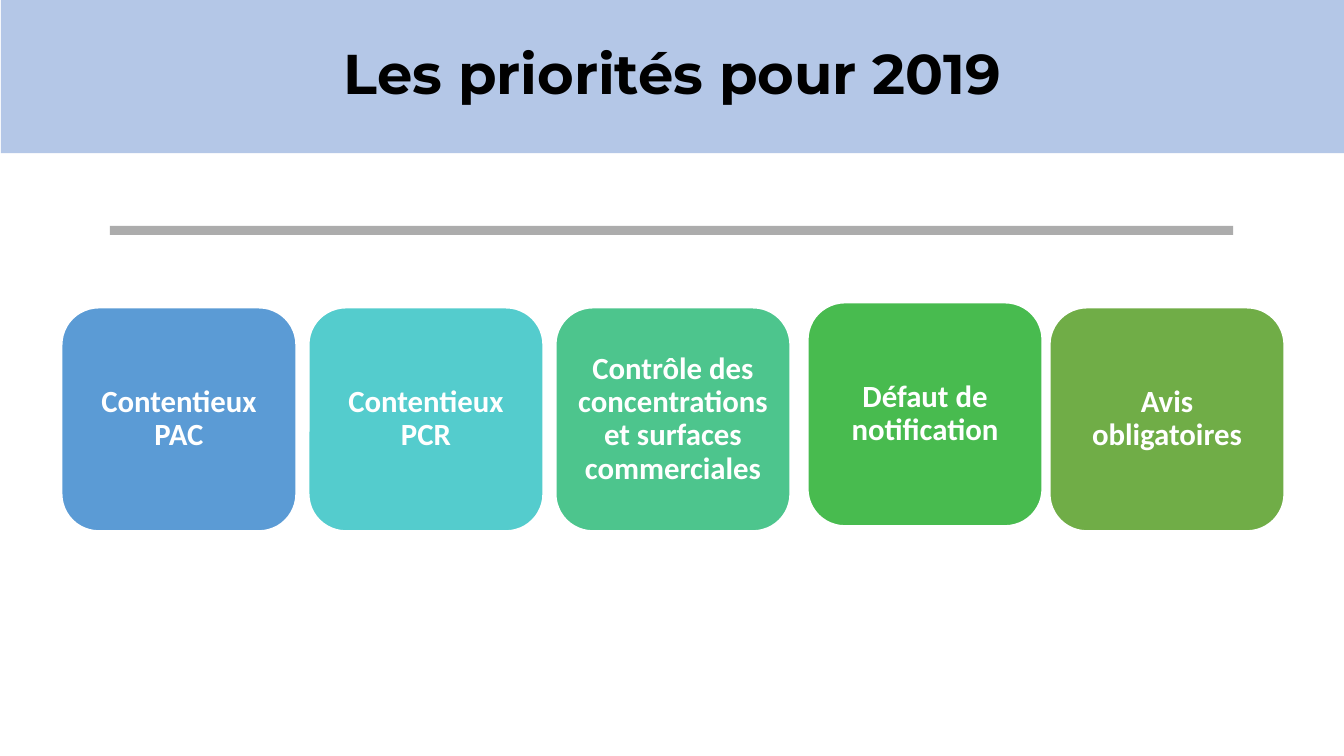
from lxml.etree import SubElement
from pptx import Presentation
from pptx.dml.color import RGBColor
from pptx.enum.shapes import MSO_SHAPE
from pptx.enum.text import MSO_ANCHOR, MSO_AUTO_SIZE, PP_ALIGN
from pptx.oxml.ns import qn
from pptx.util import Pt

SCALE = 9144
WHITE = "FFFFFF"
BODY = {"word_wrap": True, "auto_size": MSO_AUTO_SIZE.NONE,
        "vertical_anchor": MSO_ANCHOR.MIDDLE}
HEAD = {"name": "Montserrat", "size": Pt(40), "bold": True}
LABEL = {"name": "Calibri", "size": Pt(22), "bold": True}
CARDS = [
    ("Contentieux PAC", "5B9BD5", 0),
    ("Contentieux PCR", "54CCCD", 0),
    ("Contrôle des concentrations et surfaces commerciales", "4DC58D", 0),
    ("Défaut de notification", "48BB4F", 5),
    ("Avis obligatoires", "70AD47", 0),
]


def px(count):
    return count * SCALE


def tint(hue):
    return RGBColor.from_string(hue)


def apply(target, values):
    for name, value in values.items():
        setattr(target, name, value)


def paint(shape, hue):
    shape.fill.solid()
    shape.fill.fore_color.rgb = tint(hue)


def write(shape, text, style, hue, inset):
    frame = shape.text_frame
    frame.text = text
    apply(frame, BODY)
    apply(frame, {f"margin_{side}": px(inset)
                  for side in ("left", "top", "right", "bottom")})
    line = frame.paragraphs[0]
    apply(line, {"alignment": PP_ALIGN.CENTER, "line_spacing": 0.9})
    font = line.runs[0].font
    apply(font, style)
    font.color.rgb = tint(hue)


def add_block(slide, kind, box, hue):
    shape = slide.shapes.add_shape(kind, *map(px, box))
    shape.shadow.inherit = False
    paint(shape, hue)
    shape.line.fill.background()
    return shape


def add_title(slide, text):
    title = slide.shapes.title
    apply(title, {"left": px(1), "top": 0, "width": px(1332), "height": px(152)})
    paint(title, "B4C7E7")
    write(title, text, HEAD, "000000", 5)


def add_rule(slide):
    bar = add_block(slide, MSO_SHAPE.RECTANGLE, (109, 224, 1114, 9), "808080")
    shade = bar.fill._xPr.find(f"{qn('a:solidFill')}/{qn('a:srgbClr')}")
    SubElement(shade, qn("a:alpha"), val="65000")


def add_card(slide, left, top, text, hue):
    card = add_block(slide, MSO_SHAPE.ROUNDED_RECTANGLE, (left, top, 233, 222), hue)
    card.line.color.rgb = tint(WHITE)
    card.line.width = Pt(1.5)
    write(card, text, LABEL, WHITE, 9)


def main():
    deck = Presentation()
    apply(deck, {"slide_width": px(1333), "slide_height": px(750)})
    slide = deck.slides.add_slide(deck.slide_layouts.get_by_name("Title Only"))
    add_title(slide, "Les priorités pour 2019")
    add_rule(slide)
    for index, (text, hue, shift) in enumerate(CARDS):
        add_card(slide, 61 + 245 * index + shift, 305 - shift, text, hue)
    deck.save("out.pptx")


if __name__ == "__main__":
    main()
